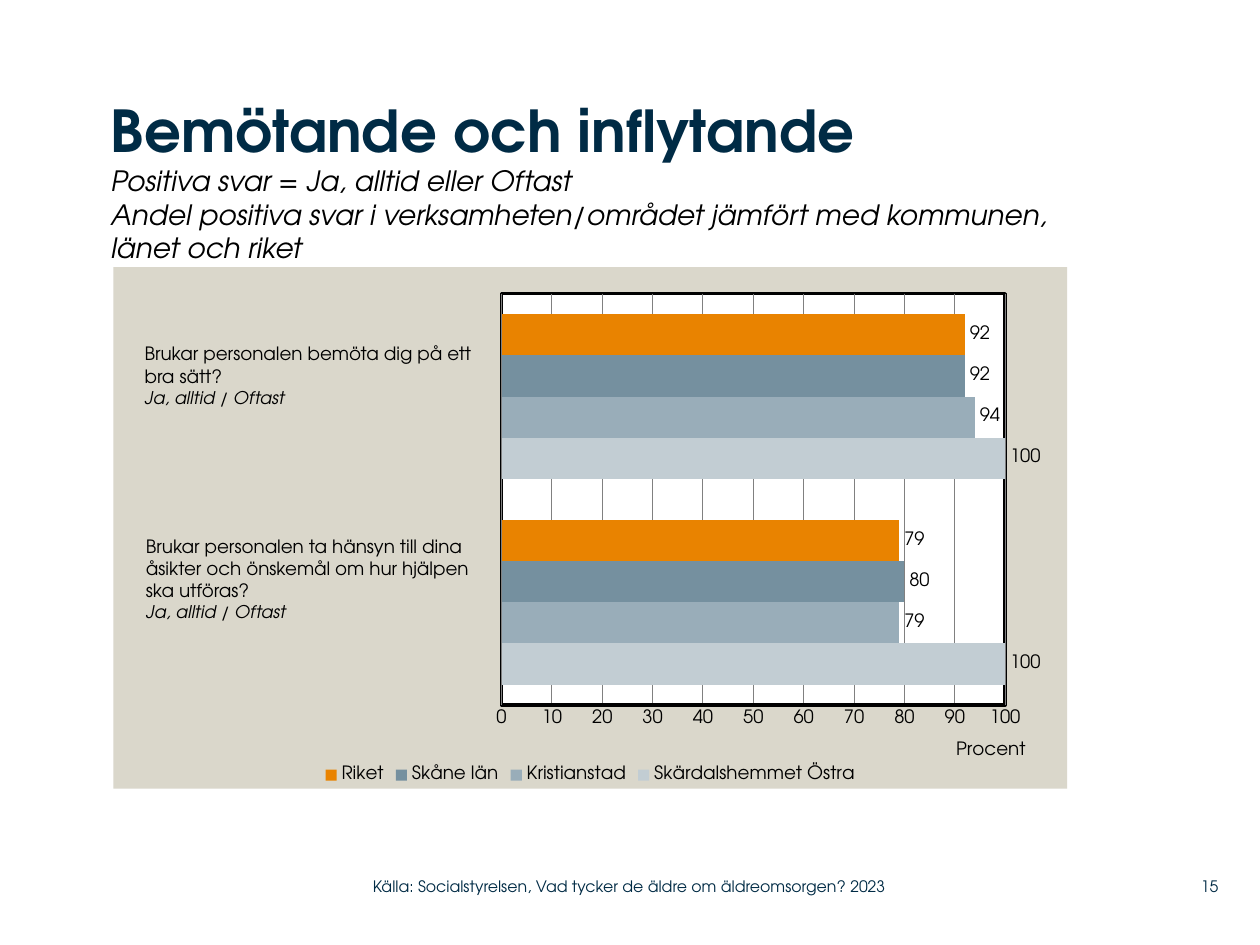
from dataclasses import dataclass

from lxml import etree
from pptx import Presentation
from pptx.chart.data import CategoryChartData
from pptx.dml.color import RGBColor
from pptx.enum.chart import XL_CHART_TYPE, XL_LABEL_POSITION, XL_LEGEND_POSITION, XL_TICK_MARK
from pptx.enum.text import MSO_ANCHOR, PP_ALIGN
from pptx.oxml import parse_xml
from pptx.oxml.ns import nsdecls, qn
from pptx.util import Inches, Pt

BARS = XL_CHART_TYPE.BAR_CLUSTERED
OUTSIDE_END = XL_LABEL_POSITION.OUTSIDE_END
LEGEND_BOTTOM = XL_LEGEND_POSITION.BOTTOM
NO_TICK = XL_TICK_MARK.NONE
TOP, MIDDLE = MSO_ANCHOR.TOP, MSO_ANCHOR.MIDDLE
LEFT, RIGHT = PP_ALIGN.LEFT, PP_ALIGN.RIGHT

FONT = "TeX Gyre Adventor"
BLACK = RGBColor(0x00, 0x00, 0x00)
WHITE = RGBColor(0xFF, 0xFF, 0xFF)
NAVY = RGBColor(0x00, 0x2B, 0x45)
SAND = RGBColor(0xDA, 0xD7, 0xCB)
GREY = RGBColor(0x80, 0x80, 0x80)
ORANGE = RGBColor(0xE9, 0x83, 0x00)
STEEL = RGBColor(0x75, 0x90, 0x9F)
MIST = RGBColor(0x99, 0xAD, 0xB9)
PALE = RGBColor(0xC2, 0xCD, 0xD3)

WIDTH, HEIGHT = Inches(10), Inches(7.5)
COLUMNS, ROWS = 100, 75


@dataclass
class Look:
    size: float
    color: RGBColor = BLACK
    bold: bool = False
    italic: bool = False

    def apply(self, font):
        font.name = FONT
        font.size = Pt(self.size)
        font.bold = self.bold
        font.italic = self.italic
        font.color.rgb = self.color


HEADING = Look(33, NAVY, bold=True)
SUBTITLE = Look(16, italic=True)
BODY = Look(10.5)
ANSWER = Look(10, italic=True)
FOOTER = Look(9, NAVY)


def manual_layout(**shares):
    layout = etree.Element(qn("c:layout"))
    manual = etree.SubElement(layout, qn("c:manualLayout"))
    if "w" in shares:
        etree.SubElement(manual, qn("c:layoutTarget"), val="inner")
    for axis in "xy":
        etree.SubElement(manual, qn(f"c:{axis}Mode"), val="edge")
    for name, share in shares.items():
        etree.SubElement(manual, qn(f"c:{name}"), val=str(share))
    return layout


def area_style(fill, line=""):
    outline = (f'<a:ln w="{Pt(2)}"><a:solidFill><a:srgbClr val="{line}"/></a:solidFill></a:ln>'
               if line else "<a:ln><a:noFill/></a:ln>")
    return parse_xml(f'<c:spPr {nsdecls("c", "a")}><a:solidFill><a:srgbClr val="{fill}"/>'
                     f"</a:solidFill>{outline}</c:spPr>")


class SlideBuilder:
    def __init__(self, deck):
        self.slide = deck.slides.add_slide(deck.slide_layouts[6])

    def place(self, left, top, width, height):
        column, row = WIDTH / COLUMNS, HEIGHT / ROWS
        return int(left * column), int(top * row), int(width * column), int(height * row)

    def text(self, area, lines, anchor=TOP, align=LEFT, padded=False):
        frame = self.slide.shapes.add_textbox(*self.place(*area)).text_frame
        frame.word_wrap = True
        frame.vertical_anchor = anchor
        if not padded:
            frame.margin_left = frame.margin_right = frame.margin_top = frame.margin_bottom = 0
        for index, (words, look) in enumerate(lines):
            para = frame.add_paragraph() if index else frame.paragraphs[0]
            para.alignment = align
            span = para.add_run()
            span.text = words
            look.apply(span.font)

    def question(self, area, lines):
        body = [(line, BODY) for line in lines]
        self.text(area, body + [("Ja, alltid / Oftast", ANSWER)], padded=True)

    def bar_chart(self, area, categories, series, axis_title):
        data = CategoryChartData()
        data.categories = categories
        for name, values, color in series:
            data.add_series(name, values)
        chart = self.slide.shapes.add_chart(BARS, *self.place(*area), data).chart
        BODY.apply(chart.font)
        chart.has_title = False
        chart.has_legend = True
        chart.legend.position = LEGEND_BOTTOM
        chart.legend.include_in_layout = False
        BODY.apply(chart.legend.font)
        plot = chart.plots[0]
        plot.gap_width = 100
        plot.overlap = 0
        plot.vary_by_categories = False
        for bars, (name, values, color) in zip(plot.series, series):
            bars.format.fill.solid()
            bars.format.fill.fore_color.rgb = color
            labels = bars.data_labels
            labels.show_value = True
            labels.position = OUTSIDE_END
            BODY.apply(labels.font)
        chart.category_axis.visible = False
        self.value_axis(chart.value_axis, axis_title)
        space = chart.element
        plot_area = space.chart.plotArea
        for layout in plot_area.findall(qn("c:layout")):
            plot_area.remove(layout)
        plot_area.insert(0, manual_layout(x=0.407, y=0.051, w=0.528, h=0.789))
        plot_area.append(area_style(WHITE, BLACK))
        space.chart.addnext(area_style(SAND))

    def value_axis(self, axis, title):
        axis.minimum_scale, axis.maximum_scale, axis.major_unit = 0, 100, 10
        axis.major_tick_mark = axis.minor_tick_mark = NO_TICK
        axis.format.line.color.rgb = BLACK
        axis.format.line.width = Pt(2)
        axis.has_major_gridlines = True
        axis.major_gridlines.format.line.color.rgb = GREY
        axis.major_gridlines.format.line.width = Pt(0.5)
        BODY.apply(axis.tick_labels.font)
        span = axis.axis_title.text_frame.paragraphs[0].add_run()
        span.text = title
        BODY.apply(span.font)
        element = axis.axis_title.element if hasattr(axis.axis_title, "element") else None
        if element is None:
            element = axis.axis_title.format.element
        for layout in element.findall(qn("c:layout")):
            element.remove(layout)
        element.find(qn("c:tx")).addnext(manual_layout(x=0.88, y=0.9))


def main():
    deck = Presentation()
    deck.slide_width, deck.slide_height = WIDTH, HEIGHT
    page = SlideBuilder(deck)
    page.bar_chart(
        (9, 21.2, 75.7, 41.4),
        ["1", "2"],
        [
            ("Skärdalshemmet Östra", (100, 100), PALE),
            ("Kristianstad", (79, 94), MIST),
            ("Skåne län", (80, 92), STEEL),
            ("Riket", (79, 92), ORANGE),
        ],
        "Procent",
    )
    page.text((8.8, 7.5, 80.4, 12), [
        ("Bemötande och inflytande", HEADING),
        ("Positiva svar = Ja, alltid eller Oftast", SUBTITLE),
        ("Andel positiva svar i verksamheten/området jämfört med kommunen, länet och riket", SUBTITLE),
    ])
    page.question((10.5, 26.7, 29.7, 8.1), ["Brukar personalen bemöta dig på ett", "bra sätt?"])
    page.question((10.6, 42, 30.1, 9.8), [
        "Brukar personalen ta hänsyn till dina",
        "åsikter och önskemål om hur hjälpen",
        "ska utföras?",
    ])
    page.text((92, 68.9, 4.7, 2.9), [("15", FOOTER)], MIDDLE, RIGHT)
    source = "Källa: Socialstyrelsen, Vad tycker de äldre om äldreomsorgen? 2023"
    page.text((29.6, 68.9, 44.3, 2.9), [(source, FOOTER)], MIDDLE)
    deck.save("out.pptx")


if __name__ == "__main__":
    main()
